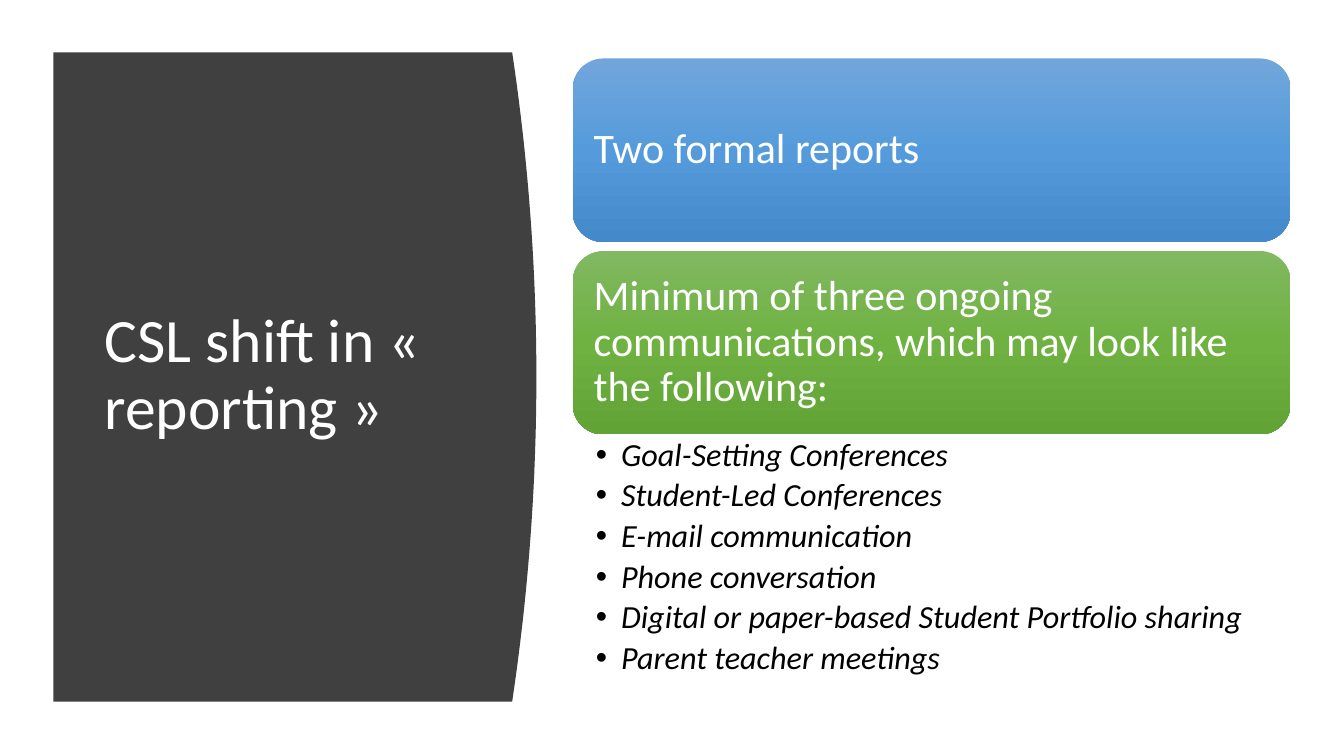
from copy import deepcopy
from dataclasses import dataclass

from lxml.etree import SubElement
from pptx import Presentation
from pptx.dml.color import RGBColor
from pptx.enum.shapes import MSO_SHAPE
from pptx.enum.text import MSO_ANCHOR, PP_ALIGN
from pptx.oxml.ns import qn
from pptx.util import Inches, Pt


@dataclass(frozen=True)
class Theme:
    font: str = "Calibri"
    panel: str = "404040"
    light: str = "FFFFFF"
    dark: str = "000000"
    blue: tuple = ("71A6DB", "559BDB", "448ACA")
    green: tuple = ("81B861", "6FB242", "62A336")
    title: int = 44
    head: int = 30
    item: int = 23


THEME = Theme()
TITLE = "CSL shift in « reporting »"
CARDS = [
    ("Two formal reports", THEME.blue),
    ("Minimum of three ongoing communications, which may look like the following:",
     THEME.green),
]
ITEMS = [
    "Goal-Setting Conferences",
    "Student-Led Conferences",
    "E-mail communication",
    "Phone conversation",
    "Digital or paper-based Student Portfolio sharing",
    "Parent teacher meetings",
]


def write(shape, *lines, size, color, pad=(0.1, 0.05), anchor=MSO_ANCHOR.MIDDLE,
          italic=False, bullet=False, after=0):
    """Fill a shape with one paragraph per line; pad is (side, top and bottom)."""
    frame = shape.text_frame
    frame.word_wrap = True
    frame.vertical_anchor = anchor
    frame.margin_left = frame.margin_right = Inches(pad[0])
    frame.margin_top = frame.margin_bottom = Inches(pad[1])
    for i, line in enumerate(lines):
        para = frame.add_paragraph() if i else frame.paragraphs[0]
        para.alignment = PP_ALIGN.LEFT
        para.line_spacing = 0.9
        para.space_after = Pt(after)
        run = para.add_run()
        run.text = line
        run.font.name = THEME.font
        run.font.size = Pt(size)
        run.font.italic = italic
        run.font.color.rgb = RGBColor.from_string(color)
        if bullet:
            props = para._p.get_or_add_pPr()
            props.set("marL", str(Inches(0.25)))
            props.set("indent", str(-Inches(0.25)))
            SubElement(props, qn("a:buFont"), typeface="Arial")
            SubElement(props, qn("a:buChar"), char="•")


def shade(shape, colors):
    """Paint an even gradient from top to bottom."""
    shape.fill.gradient()
    shape.fill.gradient_angle = 270
    first = shape.fill.gradient_stops[0]._gs
    first.addnext(deepcopy(first))
    for i, (stop, color) in enumerate(zip(shape.fill.gradient_stops, colors)):
        stop.position = i / (len(colors) - 1)
        stop.color.rgb = RGBColor.from_string(color)


def add_panel(slide, left, top, width, height, bulge=0.24, steps=40):
    """Dark panel whose right edge curves outward, with the title on it."""
    edge = []
    for i in range(steps + 1):
        part = i / steps
        reach = width - bulge * (2 * part - 1) ** 2
        edge.append((Inches(left + reach), Inches(top + height * part)))
    pen = slide.shapes.build_freeform(Inches(left), Inches(top), scale=1.0)
    pen.add_line_segments(edge + [(Inches(left), Inches(top + height))], close=True)
    panel = pen.convert_to_shape()
    panel.shadow.inherit = False
    panel.fill.solid()
    panel.fill.fore_color.rgb = RGBColor.from_string(THEME.panel)
    panel.line.fill.background()
    box = slide.shapes.add_textbox(Inches(left + 0.41), Inches(top + 0.59),
                                   Inches(3.74), Inches(height - 1.2))
    write(box, TITLE, size=THEME.title, color=THEME.light)


def add_cards(slide, left, top, width, height, tall=1.82, pitch=1.91):
    """Stack the cards, then list the items in the room below them."""
    for i, (text, colors) in enumerate(CARDS):
        card = slide.shapes.add_shape(
            MSO_SHAPE.ROUNDED_RECTANGLE, Inches(left), Inches(top + i * pitch),
            Inches(width), Inches(tall))
        card.shadow.inherit = False
        card.line.fill.background()
        shade(card, colors)
        write(card, text, size=THEME.head, color=THEME.light, pad=(0.12, 0.12))
    used = (len(CARDS) - 1) * pitch + tall
    box = slide.shapes.add_textbox(Inches(left), Inches(top + used),
                                   Inches(width), Inches(height - used))
    write(box, *ITEMS, size=THEME.item, color=THEME.dark, pad=(0.23, 0.04),
          anchor=MSO_ANCHOR.TOP, italic=True, bullet=True, after=4.2)


def main():
    deck = Presentation()
    deck.slide_width, deck.slide_height = Inches(13.33), Inches(7.5)
    slide = deck.slides.add_slide(deck.slide_layouts[6])
    add_panel(slide, 0.53, 0.52, 4.79, 6.44)
    add_cards(slide, 5.68, 0.58, 7.12, 6.31)
    deck.save("out.pptx")


if __name__ == "__main__":
    main()
